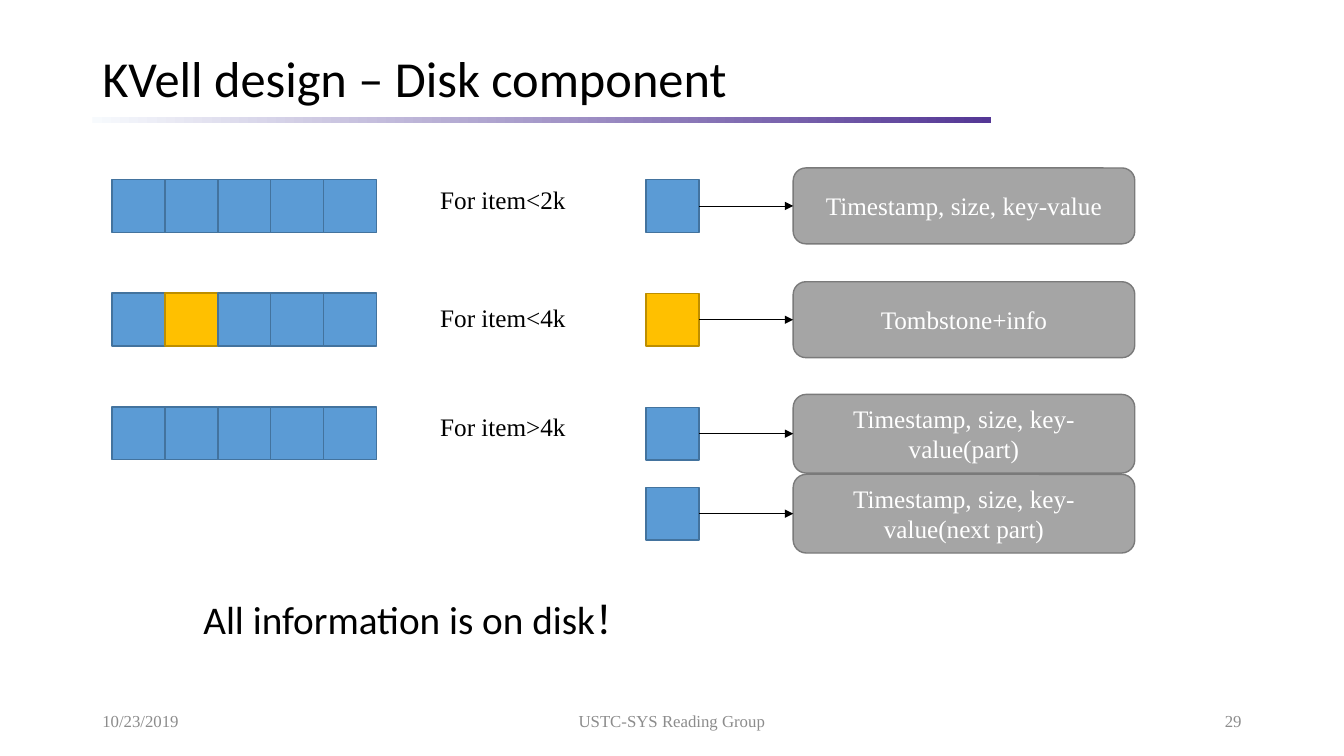
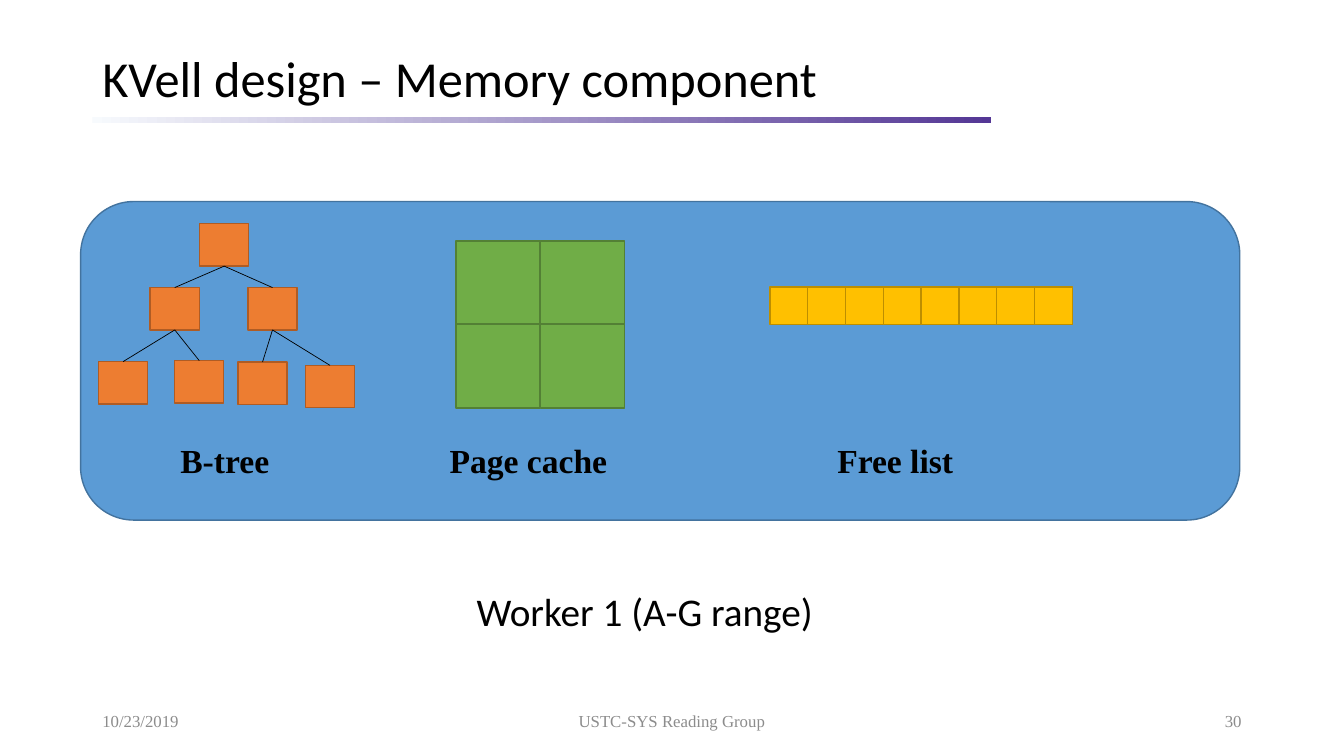
from lxml import etree
from pptx import Presentation
from pptx.dml.color import RGBColor
from pptx.enum.shapes import MSO_CONNECTOR, MSO_SHAPE
from pptx.enum.text import MSO_ANCHOR, PP_ALIGN
from pptx.oxml.ns import qn
from pptx.util import Pt

RECT, ROUND = MSO_SHAPE.RECTANGLE, MSO_SHAPE.ROUNDED_RECTANGLE
STRAIGHT = MSO_CONNECTOR.STRAIGHT
TOP, MIDDLE = MSO_ANCHOR.TOP, MSO_ANCHOR.MIDDLE
LEFT, CENTER, RIGHT = PP_ALIGN.LEFT, PP_ALIGN.CENTER, PP_ALIGN.RIGHT

BLACK = RGBColor(0x00, 0x00, 0x00)
WHITE = RGBColor(0xFF, 0xFF, 0xFF)
MUTED = RGBColor(0x8C, 0x8C, 0x8C)
PALE = RGBColor(0xF7, 0xFA, 0xFD)
PURPLE = RGBColor(0x54, 0x37, 0x95)

# Each pair is a fill and its outline
BLUE = RGBColor(0x5B, 0x9B, 0xD5), RGBColor(0x43, 0x73, 0x9E)
GOLD = RGBColor(0xFF, 0xC0, 0x00), RGBColor(0xBD, 0x8E, 0x00)
GRAY = RGBColor(0xA5, 0xA5, 0xA5), RGBColor(0x7A, 0x7A, 0x7A)
ORANGE = RGBColor(0xED, 0x7D, 0x31), RGBColor(0xAF, 0x5C, 0x24)
GREEN = RGBColor(0x70, 0xAD, 0x47), RGBColor(0x53, 0x80, 0x35)

SANS, SERIF = "Calibri", "Times New Roman"


def block(slide, kind, x, y, w, h, tone):
    """Add an outlined shape in a fill and outline pair."""
    shape = slide.shapes.add_shape(kind, Pt(x), Pt(y), Pt(w), Pt(h))
    shape.shadow.inherit = False
    shape.fill.solid()
    shape.fill.fore_color.rgb, shape.line.color.rgb = tone
    shape.line.width = Pt(1)
    return shape


def write(shape, words, size, face=SERIF, color=BLACK, align=LEFT,
          anchor=TOP, bold=False):
    """Put one styled paragraph into a shape and return it."""
    frame = shape.text_frame
    frame.word_wrap = True
    frame.vertical_anchor = anchor
    para = frame.paragraphs[0]
    para.text = words
    para.alignment = align
    para.font.name = face
    para.font.size = Pt(size)
    para.font.bold = bold
    para.font.color.rgb = color
    return para


deck = Presentation()
deck.slide_width, deck.slide_height = Pt(960), Pt(540)

# Title, rule and footer of both slides
pages = []
for title, number in [("KVell design – Disk component", "29"),
                      ("KVell design – Memory component", "30")]:
    slide = deck.slides.add_slide(deck.slide_layouts[6])
    pages.append(slide)

    rule = slide.shapes.add_shape(RECT, Pt(66), Pt(83.8), Pt(642), Pt(4))
    rule.shadow.inherit = False
    rule.line.fill.background()
    rule.fill.gradient()
    rule.fill.gradient_angle = 0
    for stop, color in zip(rule.fill.gradient_stops, (PALE, PURPLE)):
        stop.color.rgb = color

    head = slide.shapes.add_textbox(Pt(66), Pt(31), Pt(828), Pt(54))
    write(head, title, 36, SANS, anchor=MIDDLE).line_spacing = 0.9

    for words, x, w, align in [("10/23/2019", 66, 216, LEFT),
                               ("USTC-SYS Reading Group", 318, 324, CENTER),
                               (number, 678, 216, RIGHT)]:
        foot = slide.shapes.add_textbox(Pt(x), Pt(500.5), Pt(w), Pt(28.8))
        write(foot, words, 12, color=MUTED, align=align, anchor=MIDDLE)

disk, memory = pages
links = []  # slide, start shape, its side, end shape, its side, arrow

# Disk: a row of slots for each item size
SLOT = 37.8
for row, (words, y) in enumerate([("For item<2k", 128.2),
                                  ("For item<4k", 212.4),
                                  ("For item>4k", 290.2)]):
    for col in range(5):
        tone = GOLD if (row, col) == (1, 1) else BLUE
        block(disk, RECT, 80 + col * SLOT, 128.2 + row * 81.2, SLOT, SLOT, tone)
    label = disk.shapes.add_textbox(Pt(307.4), Pt(y), Pt(113), Pt(28.8))
    write(label, words, 18)

# Disk: what a slot holds
for words, y, h, tone in [
        ("Timestamp, size, key-value", 128.2, 54.2, BLUE),
        ("Tombstone+info", 209.5, 54.2, GOLD),
        ("Timestamp, size, key-value(part)", 290.9, 56.2, BLUE),
        ("Timestamp, size, key-value(next part)", 348, 56.2, BLUE)]:
    slot = block(disk, RECT, 461.5, y, SLOT, SLOT, tone)
    record = block(disk, ROUND, 566.6, y + (SLOT - h) / 2, 244, h, GRAY)
    write(record, words, 18, color=WHITE, align=CENTER, anchor=MIDDLE)
    links.append((disk, slot, 3, record, 1, True))

note = disk.shapes.add_textbox(Pt(138.2), Pt(422), Pt(351.4), Pt(41))
write(note, "All information is on disk！", 28, SANS)

# Memory: the worker and its three parts
block(memory, ROUND, 57.6, 144, 828, 227.5, BLUE)
note = memory.shapes.add_textbox(Pt(333.4), Pt(416), Pt(308), Pt(41))
write(note, "Worker 1 (A-G range)", 28, SANS)

nodes = [block(memory, RECT, x, y, 35.1, 30.3, ORANGE)
         for x, y in [(142.6, 159.8), (107.3, 205.4), (177.1, 205.4),
                      (70.4, 258.3), (124.8, 257.6), (170, 258.6),
                      (218.2, 261)]]
for i in range(1, len(nodes)):
    links.append((memory, nodes[(i - 1) // 2], 2, nodes[i], 0, False))

for i in range(4):
    block(memory, RECT, 325.8 + i % 2 * 60.2, 172 + i // 2 * 59.5, 60, 60, GREEN)
for i in range(8):
    block(memory, RECT, 550 + i * 27, 205, 27, 27, GOLD)

for words, x, w in [("B-tree", 121.7, 121), ("Page cache", 324, 143.3),
                    ("Free list", 626, 162.7)]:
    # The caption box starts one inset left of its words
    label = memory.shapes.add_textbox(Pt(x), Pt(310.3), Pt(w), Pt(36))
    write(label, words, 24, bold=True, anchor=MIDDLE)
    if words != "B-tree":
        label.left = Pt(x - (10 if words == "Page cache" else 35) + 0)
        label.text_frame.paragraphs[0].alignment = LEFT

# Connectors of both slides
for slide, start, out, end, into, arrow in links:
    line = slide.shapes.add_connector(STRAIGHT, 0, 0, 0, 0)
    line.begin_connect(start, out)
    line.end_connect(end, into)
    line.line.color.rgb = BLACK
    line.line.width = Pt(0.5)
    if arrow:
        etree.SubElement(line.line._get_or_add_ln(), qn("a:tailEnd"), type="triangle")
    etree.SubElement(line._element.spPr, qn("a:effectLst"))

deck.save("out.pptx")
